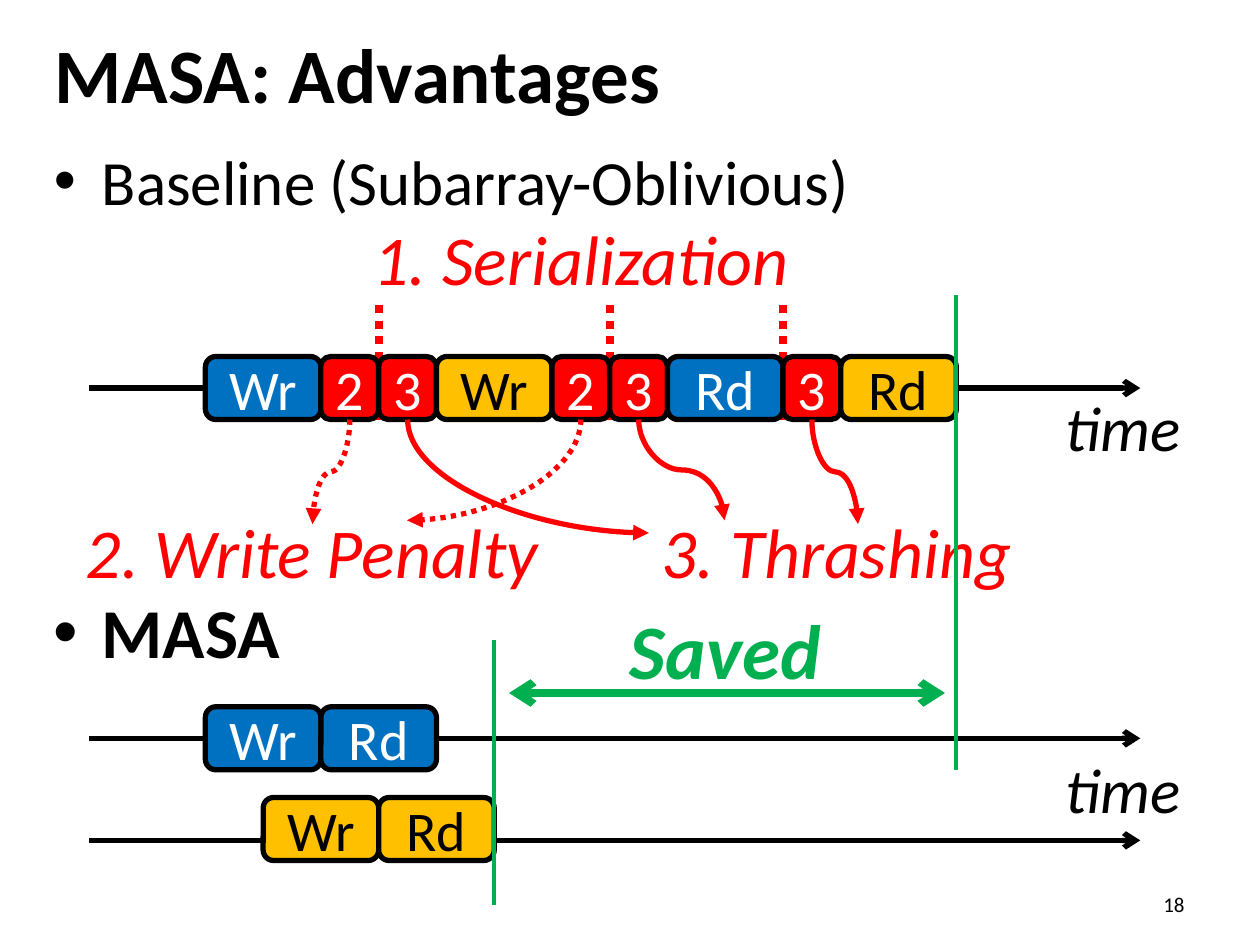
from pptx import Presentation
from pptx.dml.color import RGBColor
from pptx.enum.dml import MSO_LINE
from pptx.enum.shapes import MSO_CONNECTOR, MSO_SHAPE
from pptx.enum.text import MSO_ANCHOR, PP_ALIGN
from pptx.oxml.ns import qn
from pptx.util import Inches, Pt
from lxml.etree import SubElement

BLACK = RGBColor(0x00, 0x00, 0x00)
WHITE = RGBColor(0xFF, 0xFF, 0xFF)
RED = RGBColor(0xFF, 0x00, 0x00)
BLUE = RGBColor(0x00, 0x70, 0xC0)
GOLD = RGBColor(0xFF, 0xC0, 0x00)
GREEN = RGBColor(0x00, 0xB0, 0x50)

LEFT = 1.63
UNIT = 5.96 / 13
TALL = 0.5
END = LEFT + 13 * UNIT
SAVE = LEFT + 5 * UNIT
DOT = MSO_LINE.ROUND_DOT


def style(item, vals):
    for name, val in vals.items():
        setattr(item, name, val)


def place(shape, box):
    names = ("left", "top", "width", "height")
    style(shape, dict(zip(names, map(Inches, box))))


def write(para, text, size, color=BLACK, align=PP_ALIGN.CENTER, **marks):
    run = para.add_run()
    run.text = text
    para.alignment = align
    style(run.font, {"name": "Calibri", "size": Pt(size), **marks})
    run.font.color.rgb = color


def label(slide, box, text, size, color=BLACK, **marks):
    frame = slide.shapes.add_textbox(*map(Inches, box)).text_frame
    style(frame, {"word_wrap": True, "vertical_anchor": MSO_ANCHOR.MIDDLE})
    write(frame.paragraphs[0], text, size, color, **marks)


def bullet(para, text, size, gap, **marks):
    write(para, text, size, align=PP_ALIGN.LEFT, **marks)
    para.space_before = Pt(gap)
    props = para._p.get_or_add_pPr()
    props.set("marL", str(Inches(0.38)))
    props.set("indent", str(Inches(-0.38)))
    SubElement(props, qn("a:buFont")).set("typeface", "Arial")
    SubElement(props, qn("a:buChar")).set("char", "•")


def block(slide, x, y, wide, text, fill):
    box = map(Inches, (x, y, wide, TALL))
    shape = slide.shapes.add_shape(MSO_SHAPE.ROUNDED_RECTANGLE, *box)
    shape.shadow.inherit = False
    shape.fill.solid()
    shape.fill.fore_color.rgb = fill
    shape.line.color.rgb = BLACK
    shape.line.width = Pt(3)
    frame = shape.text_frame
    style(frame, {"margin_left": 0, "margin_right": 0, "word_wrap": True,
                  "vertical_anchor": MSO_ANCHOR.MIDDLE})
    ink = BLACK if fill == GOLD else WHITE
    write(frame.paragraphs[0], text, 32, ink)


def chain(slide, x, y, parts):
    for text, fill in parts:
        wide = UNIT if fill == RED else 2 * UNIT
        block(slide, x, y, wide, text, fill)
        x += wide


def link(slide, start, end, color, width, dash=None, head=None, tail=None,
         kind=MSO_CONNECTOR.STRAIGHT):
    line = slide.shapes.add_connector(kind, *map(Inches, start + end))
    line.line.color.rgb = color
    style(line.line, {"width": Pt(width), "dash_style": dash})
    props = line._element.spPr
    SubElement(props, qn("a:effectLst"))
    for tag, tip in (("a:headEnd", head), ("a:tailEnd", tail)):
        if tip:
            SubElement(props.find(qn("a:ln")), qn(tag)).set("type", tip)
    return line


def curve(slide, start, end, bends, dash=None):
    line = link(slide, start, end, RED, 3, dash, tail="triangle",
                kind=MSO_CONNECTOR.CURVE)
    (x1, y1), (x2, y2) = start, end
    wide, high = y2 - y1, abs(x2 - x1)
    place(line, ((x1 + x2 - wide) / 2, (y1 + y2 - high) / 2, wide, high))
    props = line._element.spPr
    frame = props.find(qn("a:xfrm"))
    right = x2 > x1
    frame.set("rot", str((270 if right else 90) * 60000))
    frame.set("flipH", "1" if right else "0")
    props.find(qn("a:prstGeom")).set("prst", f"curvedConnector{bends}")


def heads(slide):
    title = slide.shapes.title
    place(title, (0.33, 0.08, 9.33, 1))
    title.text_frame.vertical_anchor = MSO_ANCHOR.MIDDLE
    write(title.text_frame.paragraphs[0], "MASA: Advantages", 44,
          align=PP_ALIGN.LEFT, bold=True)
    box = map(Inches, (0.33, 1.08, 9.33, 5.87))
    frame = slide.shapes.add_textbox(*box).text_frame
    frame.word_wrap = True
    bullet(frame.paragraphs[0], "Baseline (Subarray-Oblivious)", 36, 0)
    bullet(frame.add_paragraph(), "MASA", 40, 212, bold=True)
    label(slide, (7.17, 7, 2.33, 0.35), "18", 12, align=PP_ALIGN.RIGHT)


def base(slide):
    for step in (3, 7, 10):
        x = LEFT + step * UNIT
        link(slide, (x, 2.42), (x, 3.33), RED, 4.5, DOT)
    link(slide, (0.71, 3.08), (9.05, 3.08), BLACK, 3, tail="arrow")
    chain(slide, LEFT, 2.83, [
        ("Wr", BLUE), ("2", RED), ("3", RED), ("Wr", GOLD), ("2", RED),
        ("3", RED), ("Rd", BLUE), ("3", RED), ("Rd", GOLD)])
    for box, text, align in (
            ((LEFT, 1.75, 5.96, 0.59), "1. Serialization", PP_ALIGN.CENTER),
            ((0.57, 4.16, 3.81, 0.42), "2. Write Penalty", PP_ALIGN.CENTER),
            ((5.15, 4.16, 3.33, 0.42), "3. Thrashing", PP_ALIGN.LEFT)):
        label(slide, box, text, 40, RED, align=align, italic=True)
    for step, end, bends, dash in (
            (2.5, (2.48, 4.16), 3, DOT), (6.5, (3.23, 4.13), 2, DOT),
            (7.5, (5.75, 4.13), 3, None), (10.5, (6.81, 4.16), 3, None),
            (3.5, (5.15, 4.23), 2, None)):
        curve(slide, (LEFT + step * UNIT, 3.33), end, bends, dash)


def masa(slide):
    for y in (5.86, 6.67):
        link(slide, (0.71, y), (9.05, y), BLACK, 3, tail="arrow")
    chain(slide, LEFT, 5.61, [("Wr", BLUE), ("Rd", BLUE)])
    chain(slide, LEFT + UNIT, 6.33, [("Wr", GOLD), ("Rd", GOLD)])
    for y in (3.23, 6.11):
        label(slide, (8.33, y, 1.17, 0.3), "time", 36, italic=True)


def saved(slide):
    link(slide, (END, 2.34), (END, 6.11), GREEN, 2.25)
    link(slide, (SAVE, 5.08), (SAVE, 7.18), GREEN, 2.25)
    link(slide, (4.04, 5.5), (7.5, 5.5), GREEN, 4.5,
         head="arrow", tail="arrow")
    label(slide, (SAVE, 4.92, END - SAVE, 0.46), "Saved", 44, GREEN,
          bold=True, italic=True)


def main():
    deck = Presentation()
    style(deck, {"slide_width": Inches(10), "slide_height": Inches(7.5)})
    slide = deck.slides.add_slide(deck.slide_layouts[5])
    for part in (heads, base, masa, saved):
        part(slide)
    deck.save("out.pptx")


if __name__ == "__main__":
    main()
